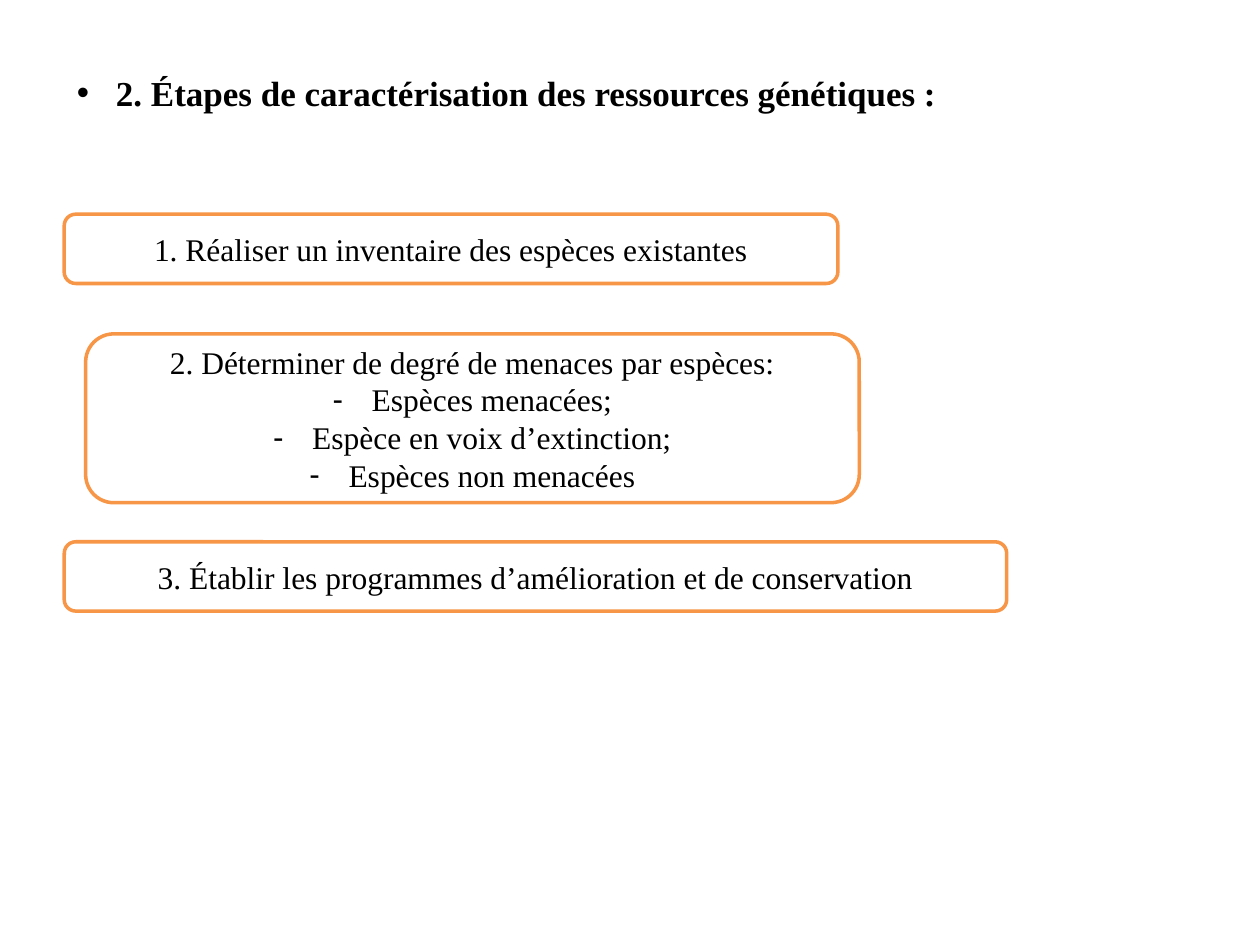
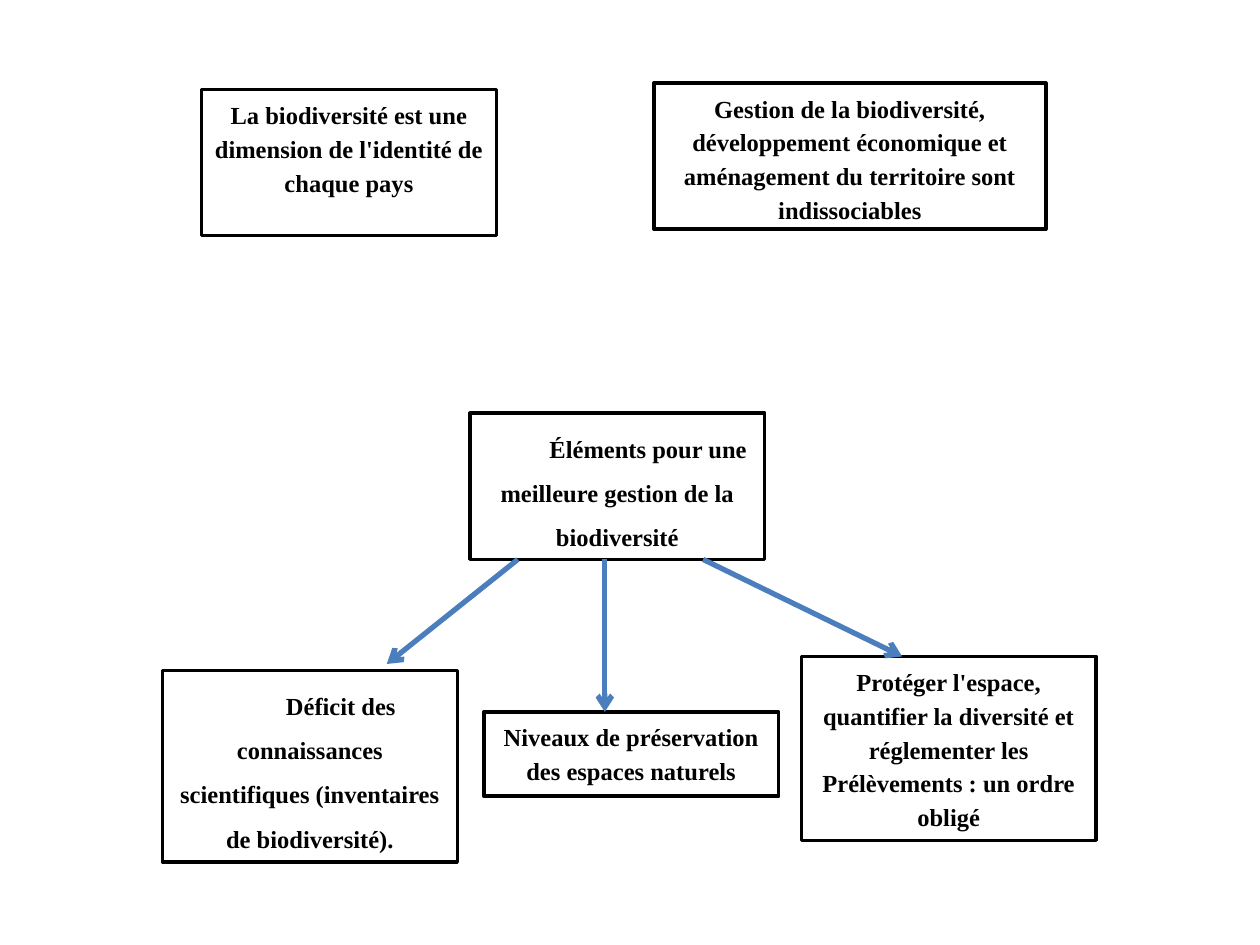
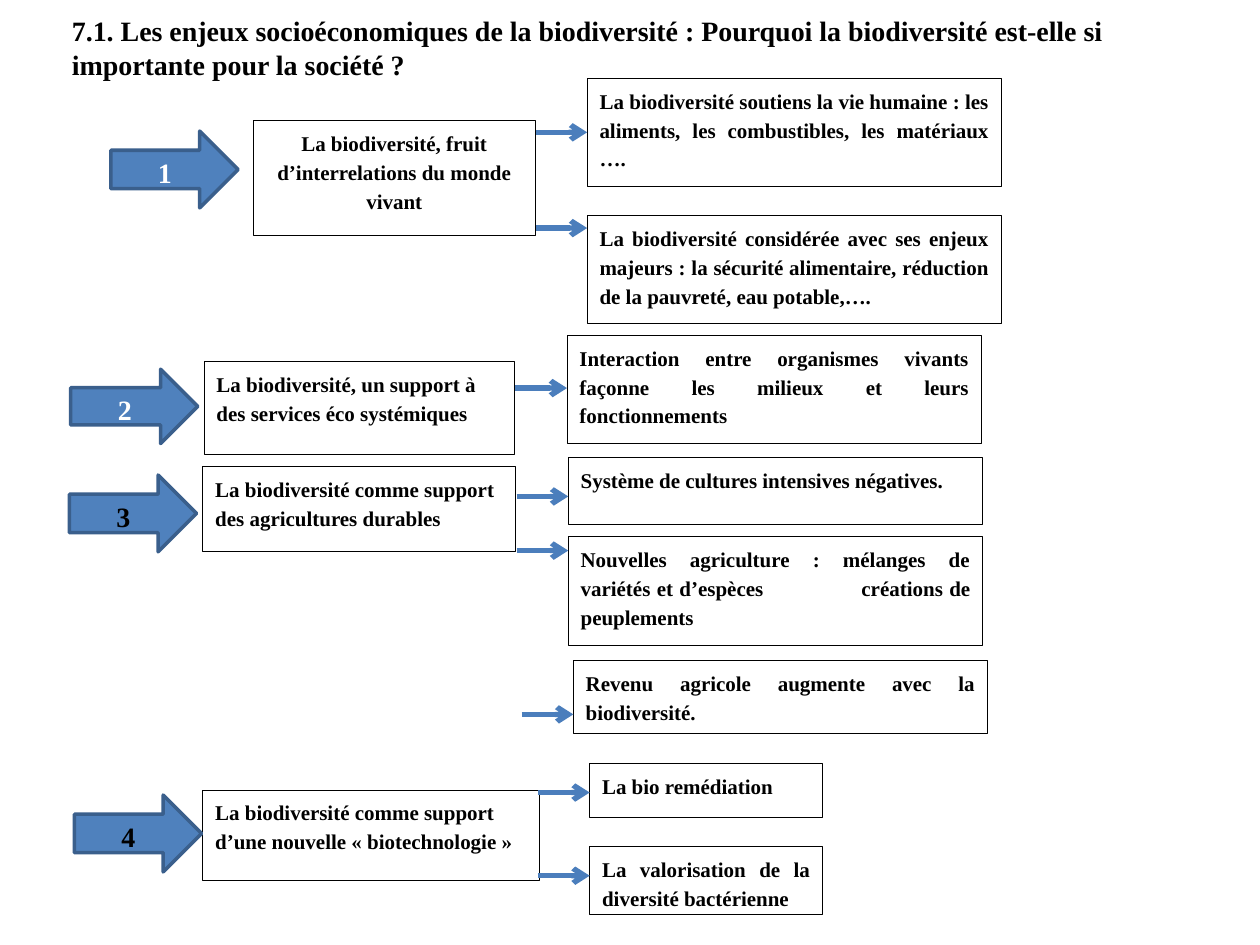
"""Build three slides on genetic resources and biodiversity."""
from dataclasses import dataclass

from lxml import etree
from pptx import Presentation
from pptx.dml.color import RGBColor
from pptx.enum.shapes import MSO_CONNECTOR, MSO_SHAPE
from pptx.enum.text import MSO_ANCHOR, MSO_AUTO_SIZE, PP_ALIGN
from pptx.oxml.ns import qn
from pptx.util import Inches, Pt

FONT = "Times New Roman"
COLOURS = {
    "black": "000000",
    "white": "FFFFFF",
    "orange": "F79646",
    "blue": "4F81BD",
    "blue_edge": "3A5F8C",
    "link": "4B7EBC",
}
LEFT, CENTER, JUSTIFY = PP_ALIGN.LEFT, PP_ALIGN.CENTER, PP_ALIGN.JUSTIFY
TOP, MIDDLE = MSO_ANCHOR.TOP, MSO_ANCHOR.MIDDLE
RECTANGLE, ROUNDED = MSO_SHAPE.RECTANGLE, MSO_SHAPE.ROUNDED_RECTANGLE
RIGHT_ARROW = MSO_SHAPE.RIGHT_ARROW
STRAIGHT = MSO_CONNECTOR.STRAIGHT
NO_AUTOFIT = MSO_AUTO_SIZE.NONE
TITLE_ONLY, BLANK = 5, 6
BULLET_INDENT = 0.31
LINK_LENGTH = 0.41


@dataclass(frozen=True)
class Style:
    """Look shared by one family of boxes."""

    shape: int
    fill: str
    edge: str
    edge_width: float
    size: int
    bold: bool = True
    align: int = CENTER
    anchor: int = TOP
    spacing: float = 1.15
    after: int = 10
    text: str = "black"


@dataclass(frozen=True)
class Box:
    """Place and wording of one box, with its paragraph options."""

    left: float
    top: float
    width: float
    height: float
    text: str
    bullets: tuple = ()
    first_indent: float = 0
    spacing: float = 0
    align: int = 0
    tab: float = 0


@dataclass(frozen=True)
class Effect:
    """Consequence box with the height of the arrow that leads to it."""

    box: Box
    link_y: float


@dataclass(frozen=True)
class Theme:
    """Numbered arrow with the colour of its number and the theme box."""

    arrow: Box
    number_colour: str
    box: Box


STEP = Style(ROUNDED, "white", "orange", 2, 18, bold=False, anchor=MIDDLE, spacing=1, after=0)
IDEA = Style(RECTANGLE, "white", "black", 2, 14)
THEME = Style(RECTANGLE, "white", "black", 0.5, 12, align=LEFT)
EFFECT = Style(RECTANGLE, "white", "black", 0.5, 12, align=JUSTIFY)

STEPS = (
    Box(0.51, 1.7, 6.14, 0.55, "1. Réaliser un inventaire des espèces existantes"),
    Box(0.68, 2.65, 6.14, 1.34, "2. Déterminer de degré de menaces par espèces:",
        bullets=("Espèces menacées;", "Espèce en voix d’extinction;", "Espèces non menacées")),
    Box(0.51, 4.3, 7.48, 0.55, "3. Établir les programmes d’amélioration et de conservation"),
)
IDEAS = (
    Box(1.6, 0.71, 2.34, 1.16, "La biodiversité est une dimension de l'identité de chaque pays"),
    Box(5.19, 0.66, 3.11, 1.16,
        "Gestion de la biodiversité, développement économique et "
        "aménagement du territoire sont indissociables"),
    Box(3.73, 3.28, 2.34, 1.16, "Éléments pour une meilleure gestion de la biodiversité",
        first_indent=0.49, spacing=1.5),
    Box(1.29, 5.32, 2.34, 1.52,
        "Déficit des connaissances scientifiques (inventaires de biodiversité).",
        first_indent=0.49, spacing=1.5),
    Box(3.84, 5.65, 2.34, 0.67, "Niveaux de préservation des espaces naturels"),
    Box(6.36, 5.21, 2.34, 1.46,
        "Protéger l'espace, quantifier la diversité et réglementer les "
        "Prélèvements : un ordre obligé"),
)
IDEA_LINKS = (
    ((4.11, 4.44), (3.07, 5.27)),
    ((4.8, 4.44), (4.8, 5.65)),
    ((5.58, 4.44), (7.16, 5.21)),
)
THEMES = (
    Theme(Box(0.88, 1.04, 1.01, 0.61, "1"), "white",
          Box(2.01, 0.96, 2.24, 0.91, "La biodiversité, fruit d’interrelations du monde vivant",
              align=CENTER)),
    Theme(Box(0.56, 2.93, 1.01, 0.59, "2"), "white",
          Box(1.62, 2.87, 2.46, 0.74,
              "La biodiversité, un support à des services éco systémiques")),
    Theme(Box(0.55, 3.77, 1.01, 0.61, "3"), "black",
          Box(1.61, 3.7, 2.48, 0.68, "La biodiversité comme support des agricultures durables")),
    Theme(Box(0.59, 6.31, 1.01, 0.61, "4"), "black",
          Box(1.61, 6.27, 2.67, 0.72,
              "La biodiversité comme support d’une nouvelle « biotechnologie »")),
)
EFFECTS = (
    Effect(Box(4.66, 0.62, 3.29, 0.86,
               "La biodiversité soutiens la vie humaine : les aliments, "
               "les combustibles, les matériaux …."), 1.05),
    Effect(Box(4.66, 1.71, 3.29, 0.86,
               "La biodiversité considérée avec ses enjeux majeurs : la sécurité "
               "alimentaire, réduction de la pauvreté, eau potable,…."), 1.81),
    Effect(Box(4.5, 2.66, 3.29, 0.86,
               "Interaction entre organismes vivants\vfaçonne les milieux "
               "et leurs fonctionnements"), 3.08),
    Effect(Box(4.51, 3.63, 3.29, 0.53, "Système de cultures intensives négatives."), 3.94),
    Effect(Box(4.51, 4.26, 3.29, 0.86,
               "Nouvelles agriculture : mélanges de variétés et d’espèces\t"
               "créations de peuplements", tab=2.21), 4.37),
    Effect(Box(4.55, 5.24, 3.29, 0.58, "Revenu agricole augmente avec la biodiversité."), 5.67),
    Effect(Box(4.68, 6.06, 1.85, 0.43, "La bio remédiation"), 6.29),
    Effect(Box(4.68, 6.72, 1.85, 0.54, "La valorisation de la diversité bactérienne"), 6.95),
)


def colour(name: str) -> RGBColor:
    """Return the named colour."""
    return RGBColor.from_string(COLOURS[name])


def set_font(paragraph, size: int, bold: bool, name: str = "black") -> None:
    """Set the shared font on a paragraph."""
    font = paragraph.font
    font.name, font.size, font.bold = FONT, Pt(size), bold
    font.color.rgb = colour(name)


def add_bullet(paragraph, mark: str) -> None:
    """Give a paragraph a hanging bullet."""
    properties = paragraph._p.get_or_add_pPr()
    properties.set("marL", str(Inches(BULLET_INDENT)))
    properties.set("indent", str(-Inches(BULLET_INDENT)))
    etree.SubElement(properties, qn("a:buFont"), typeface="Arial")
    etree.SubElement(properties, qn("a:buChar"), char=mark)


def add_tab_stop(paragraph, position: float) -> None:
    """Add one left tab stop to a paragraph."""
    stops = etree.SubElement(paragraph._p.get_or_add_pPr(), qn("a:tabLst"))
    etree.SubElement(stops, qn("a:tab"), pos=str(Inches(position)), algn="l")


def add_title(page, text: str, left: float, top: float, width: float, height: float,
              size: int, margin_top: float = 0.05):
    """Move and format the title placeholder and return its paragraph."""
    title = page.shapes.title
    title.left, title.top = Inches(left), Inches(top)
    title.width, title.height = Inches(width), Inches(height)
    frame = title.text_frame
    frame.auto_size, frame.vertical_anchor = NO_AUTOFIT, TOP
    frame.margin_top = Inches(margin_top)
    frame.text = text
    paragraph = frame.paragraphs[0]
    paragraph.alignment = LEFT
    set_font(paragraph, size, True)
    return paragraph


def add_box(page, box: Box, style: Style) -> None:
    """Draw one box with its text."""
    shape = page.shapes.add_shape(style.shape, Inches(box.left), Inches(box.top),
                                  Inches(box.width), Inches(box.height))
    shape.shadow.inherit = False
    shape.fill.solid()
    shape.fill.fore_color.rgb = colour(style.fill)
    shape.line.color.rgb = colour(style.edge)
    shape.line.width = Pt(style.edge_width)
    frame = shape.text_frame
    frame.word_wrap, frame.vertical_anchor = True, style.anchor
    for index, text in enumerate((box.text, *box.bullets)):
        paragraph = frame.add_paragraph() if index else frame.paragraphs[0]
        paragraph.text = text
        paragraph.alignment = box.align or style.align
        paragraph.line_spacing = box.spacing or style.spacing
        paragraph.space_after = Pt(style.after)
        set_font(paragraph, style.size, style.bold, style.text)
        if index:
            add_bullet(paragraph, "-")
        if box.first_indent:
            paragraph._p.get_or_add_pPr().set("indent", str(Inches(box.first_indent)))
        if box.tab:
            add_tab_stop(paragraph, box.tab)


def add_link(page, start: tuple, end: tuple) -> None:
    """Draw an arrow from start to end."""
    points = [Inches(value) for value in (*start, *end)]
    link = page.shapes.add_connector(STRAIGHT, *points)
    link.line.color.rgb = colour("link")
    link.line.width = Pt(3)
    etree.SubElement(link.line._get_or_add_ln(), qn("a:tailEnd"), type="arrow")
    etree.SubElement(link._element.spPr, qn("a:effectLst"))


def build_steps(page) -> None:
    """Build the slide of characterisation steps."""
    heading = add_title(page, "2. Étapes de caractérisation des ressources génétiques :",
                        0.51, 0.52, 8.82, 0.77, 20)
    add_bullet(heading, "•")
    for step in STEPS:
        add_box(page, step, STEP)


def build_ideas(page) -> None:
    """Build the slide of management ideas."""
    for idea in IDEAS:
        add_box(page, idea, IDEA)
    for start, end in IDEA_LINKS:
        add_link(page, start, end)


def build_stakes(page) -> None:
    """Build the slide of socioeconomic stakes."""
    add_title(page, "7.1. Les enjeux socioéconomiques de la biodiversité : Pourquoi la "
              "biodiversité est-elle si importante pour la société ?",
              0.47, 0.03, 9.26, 1.18, 16, margin_top=0.08)
    for theme in THEMES:
        add_box(page, theme.box, THEME)
        number = Style(RIGHT_ARROW, "blue", "blue_edge", 2, 16, anchor=MIDDLE,
                       text=theme.number_colour)
        add_box(page, theme.arrow, number)
    for effect in EFFECTS:
        add_box(page, effect.box, EFFECT)
        left, height = effect.box.left, effect.link_y
        add_link(page, (left - LINK_LENGTH, height), (left, height))


def main() -> None:
    """Build and save the deck."""
    deck = Presentation()
    deck.slide_width, deck.slide_height = Inches(10), Inches(7.5)
    for layout, build in ((TITLE_ONLY, build_steps), (BLANK, build_ideas),
                          (TITLE_ONLY, build_stakes)):
        build(deck.slides.add_slide(deck.slide_layouts[layout]))
    deck.save("out.pptx")


if __name__ == "__main__":
    main()
